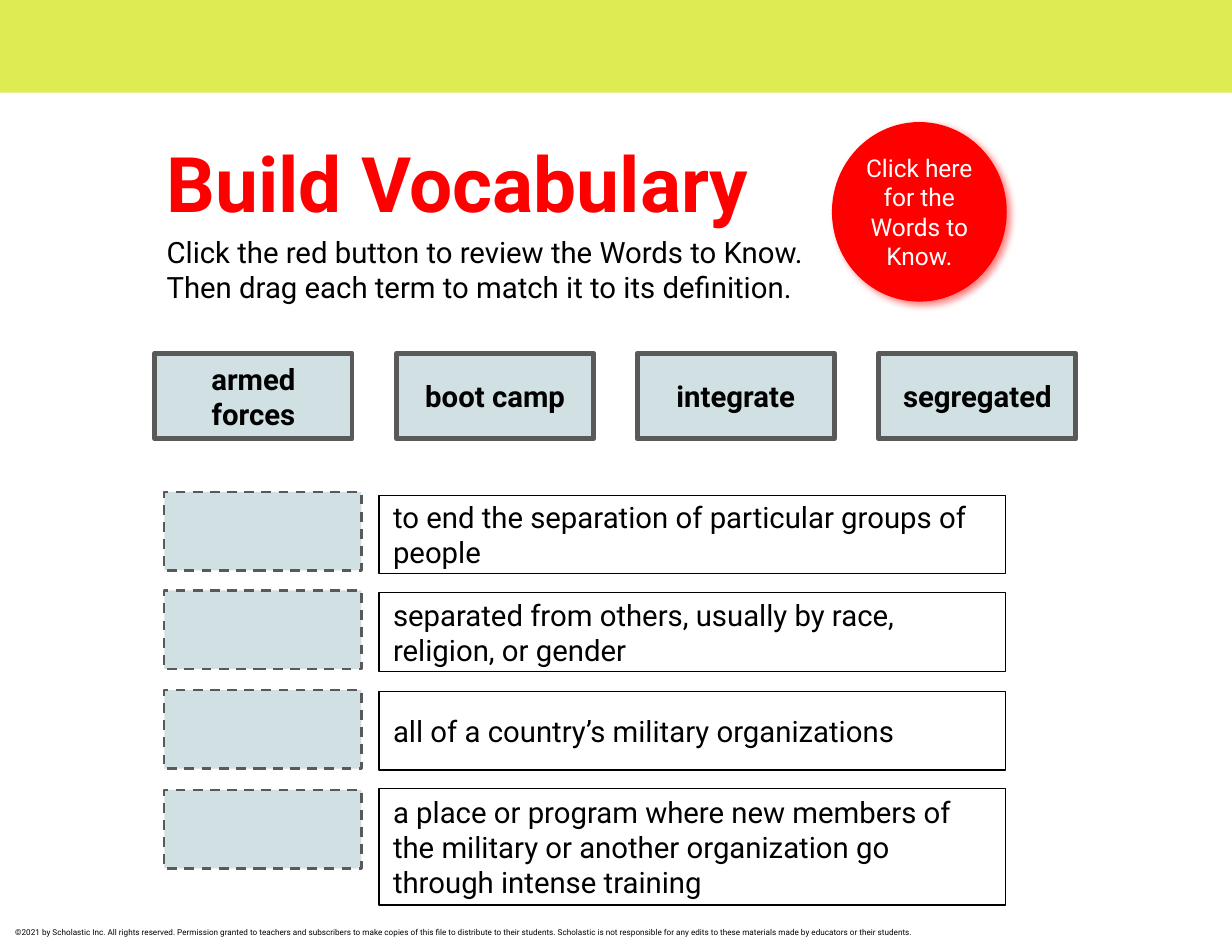
import pptx
import pptx.util
import pptx.dml.color
import pptx.enum.dml
import pptx.enum.shapes
import pptx.enum.text
import pptx.oxml
import pptx.oxml.ns

PX = 9144  # 100 px to the inch
LIME = pptx.dml.color.RGBColor(0xDE, 0xEB, 0x52)
RED = pptx.dml.color.RGBColor(0xFF, 0x00, 0x00)
BLACK = pptx.dml.color.RGBColor(0x00, 0x00, 0x00)
WHITE = pptx.dml.color.RGBColor(0xFF, 0xFF, 0xFF)
PALE = pptx.dml.color.RGBColor(0xD0, 0xE0, 0xE3)
GREY = pptx.dml.color.RGBColor(0x59, 0x59, 0x59)
SHAPE = pptx.enum.shapes.MSO_SHAPE
ANCHOR = pptx.enum.text.MSO_ANCHOR
ALIGN = pptx.enum.text.PP_ALIGN

deck = pptx.Presentation()
deck.slide_width, deck.slide_height = 1050 * PX, 800 * PX
slide = deck.slides.add_slide(deck.slide_layouts[6])


def add_box(box, kind=SHAPE.RECTANGLE, fill=None, line=None, weight=0):
    shape = slide.shapes.add_shape(kind, *(n * PX for n in box))
    shape.shadow.inherit = False
    if fill is None:
        shape.fill.background()
    else:
        shape.fill.solid()
        shape.fill.fore_color.rgb = fill
    if line is None:
        shape.line.fill.background()
    else:
        shape.line.color.rgb = line
        shape.line.width = pptx.util.Pt(weight)
    return shape


def write(shape, text, size, color=BLACK, bold=False, align=ALIGN.LEFT,
          anchor=ANCHOR.MIDDLE, inset=12):
    frame = shape.text_frame
    frame.word_wrap = True
    frame.vertical_anchor = anchor
    frame.margin_left = frame.margin_right = inset * PX
    frame.margin_top = frame.margin_bottom = inset * PX
    paragraph = frame.paragraphs[0]
    paragraph.text = text
    paragraph.alignment = align
    paragraph.font.name = "Roboto"
    paragraph.font.size = pptx.util.Pt(size)
    paragraph.font.bold = bold
    paragraph.font.color.rgb = color


# Top band
add_box((0, -1, 1050, 80), fill=LIME)

# Copyright line, heading and instructions
copyright_line = slide.shapes.add_textbox(13 * PX, 790 * PX, 877 * PX, 10 * PX)
write(copyright_line, "©2021 by Scholastic Inc. All rights reserved. Permission granted "
      "to teachers and subscribers to make copies of this file to distribute to their "
      "students. Scholastic is not responsible for any edits to these materials made by "
      "educators or their students.", 5, anchor=ANCHOR.TOP, inset=0)
heading = slide.shapes.add_textbox(130 * PX, 104 * PX, 548 * PX, 89 * PX)
write(heading, "Build Vocabulary", 47, RED, bold=True, anchor=ANCHOR.TOP)
instructions = slide.shapes.add_textbox(130 * PX, 185 * PX, 624 * PX, 89 * PX)
write(instructions, "Click the red button to review the Words to Know.\v"
      "Then drag each term to match it to its definition.", 18)

# Definitions, each with a drop target on its left
definitions = [
    ("to end the separation of particular groups of people", 67),
    ("separated from others, usually by race, religion, or gender", 67),
    ("all of a country’s military organizations", 67),
    ("a place or program where new members of the military or another "
     "organization go through intense training", 99),
]
for row, (meaning, height) in enumerate(definitions):
    definition = add_box((323, 422 + round(row * 83.4), 534, height),
                         line=BLACK, weight=0.75)
    write(definition, meaning, 18)
    target = add_box((140, 419 + round(row * 84.5), 168, 67),
                     fill=PALE, line=GREY, weight=1.5)
    target.line.dash_style = pptx.enum.dml.MSO_LINE.DASH

# Round red button with a soft red shadow
button = add_box((709, 104, 149, 153), SHAPE.OVAL, fill=RED)
write(button, "Click here for the Words to Know.", 15, WHITE,
      align=ALIGN.CENTER, inset=0)
effects = button.element.spPr.find(pptx.oxml.ns.qn("a:effectLst"))
effects.append(pptx.oxml.parse_xml(
    f'<a:outerShdw {pptx.oxml.ns.nsdecls("a")} blurRad="57150" dist="38100" '
    'dir="2580000" algn="bl" rotWithShape="0"><a:srgbClr val="FF0000">'
    '<a:alpha val="50000"/></a:srgbClr></a:outerShdw>'))

# Term cards
terms = ["armed forces", "boot camp", "integrate", "segregated"]
for column, term in enumerate(terms):
    card = add_box((132 + round(column * 205.7), 301, 168, 73),
                   fill=PALE, line=GREY, weight=3)
    write(card, term, 18, bold=True, align=ALIGN.CENTER, inset=10)

deck.save("out.pptx")
